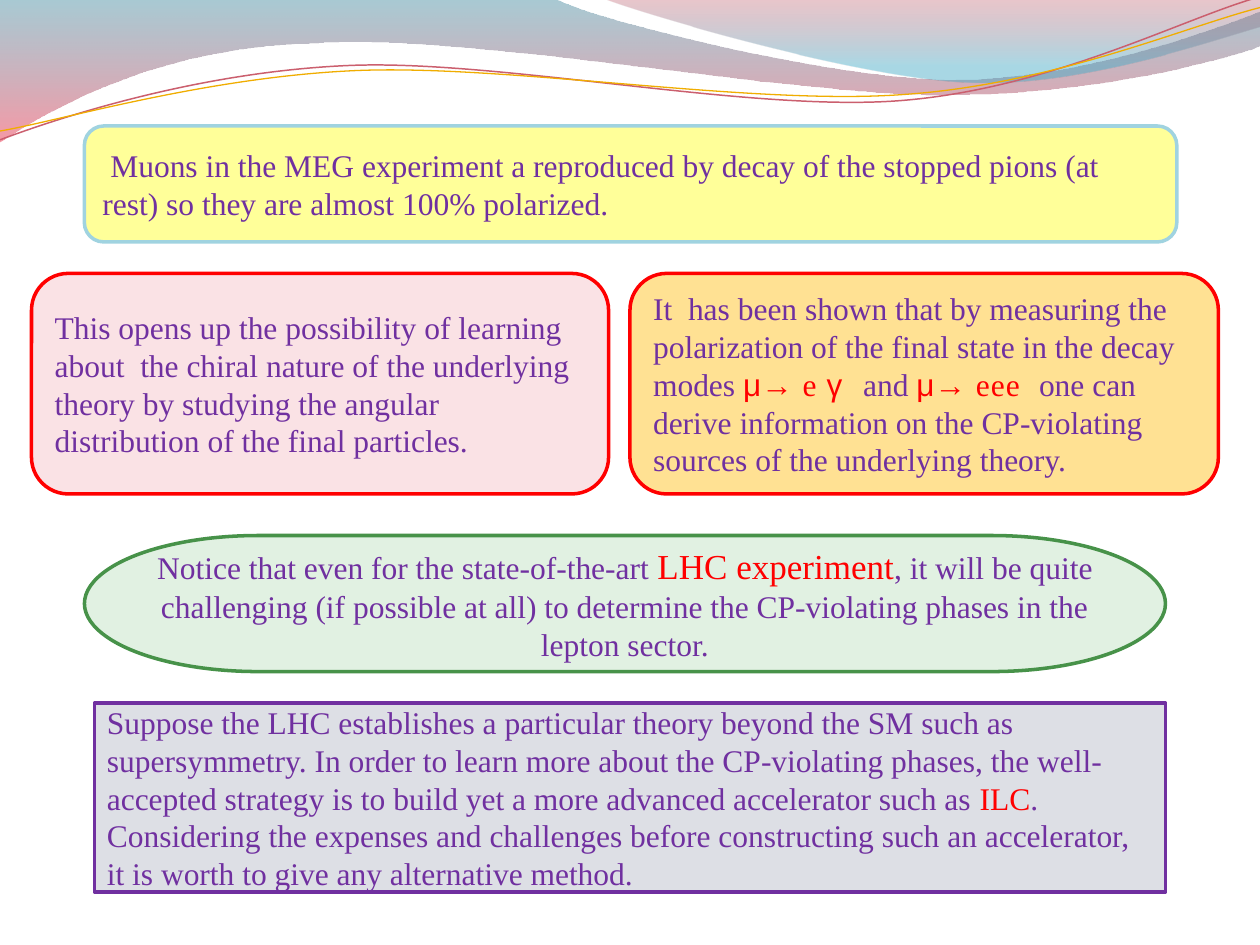
from math import cos, radians, sin

from lxml import etree
from pptx import Presentation
from pptx.dml.color import RGBColor
from pptx.enum.shapes import MSO_SHAPE as Kind
from pptx.enum.text import MSO_ANCHOR as Anchor, PP_ALIGN as Align
from pptx.oxml import parse_xml
from pptx.oxml.ns import nsdecls, qn
from pptx.util import Inches, Pt

WHITE = RGBColor(0xFF, 0xFF, 0xFF)
PURPLE = RGBColor(0x70, 0x30, 0xA0)
RED = RGBColor(0xFF, 0x00, 0x00)
ROSE = RGBColor(0xCB, 0x5F, 0x6E)
AMBER = RGBColor(0xF0, 0xAD, 0x00)
YELLOW = RGBColor(0xFF, 0xFF, 0x99)
SKY = RGBColor(0xA0, 0xD3, 0xE0)
PINK = RGBColor(0xFA, 0xE2, 0xE5)
GOLD = RGBColor(0xFF, 0xE1, 0x93)
MINT = RGBColor(0xE1, 0xF1, 0xE2)
GREEN = RGBColor(0x47, 0x92, 0x49)
GRAY = RGBColor(0xDD, 0xDF, 0xE5)

SERIF, SANS = "Times New Roman", "Arial"
BODY = (SERIF, 18, PURPLE, 0)
HOT = (SERIF, 18, RED, 0)
BIG = (SERIF, 20, RED, 0)
GREEK = (SANS, 18, RED, 0)
WIDE = (SERIF, 18, RED, 0.6)
GAMMA = (SANS, 18, RED, 0.6)

BANDS = [
    ([(0, 0), (4.4, -0.01),
      (4.76, 0.17, 6.64, 0.63, 7.58, 0.63),
      (8.53, 0.63, 9.58, 0.26, 10, 0.09), (10.01, 0.36),
      (9.83, 0.44, 8.7, 0.76, 7.46, 0.75),
      (6.22, 0.75, 3.82, 0.28, 2.57, 0.34),
      (1.29, 0.36, 0.46, 0.83, -0.01, 1.13)],
     [(0, "3F8A9F", 45), (100, "EF445B", 55)]),
    ([(4.79, -0.01),
      (5.09, 0.11, 6.82, 0.62, 7.69, 0.65),
      (8.56, 0.69, 9.61, 0.32, 10, 0.21), (10, 0)],
     [(0, "B84253", 30), (80, "42ABC7", 45)]),
]

TILT = -2.7
WAVES = [
    ([(0, 1.11),
      (0.48, 0.93, 1.58, 0.57, 2.77, 0.52),
      (3.95, 0.47, 5.93, 0.89, 7.13, 0.8),
      (8.33, 0.71, 9.38, 0.15, 9.98, -0.02)], ROSE, 0.85, (-0.02, 0.22, 10.02, 0.71)),
    ([(0, 1.04),
      (0.47, 0.96, 1.64, 0.61, 2.83, 0.56),
      (4.03, 0.51, 5.97, 0.84, 7.17, 0.75),
      (8.36, 0.67, 9.41, 0.21, 10, 0.06)], AMBER, 0.75, (-0.02, 0.3, 10.03, 0.58)),
]

BOXES = [
    (Kind.ROUNDED_RECTANGLE, (0.67, 1, 8.67, 0.92), YELLOW, SKY, Align.LEFT, [
        (" Muons in the MEG experiment a reproduced by decay of the stopped "
         "pions (at rest) so they are almost 100% polarized.", BODY)]),
    (Kind.FLOWCHART_ALTERNATE_PROCESS, (0.25, 2.17, 4.58, 1.75), PINK, RED, Align.LEFT, [
        ("This opens up the possibility of learning about  the chiral nature "
         "of the underlying theory by studying the angular distribution of "
         "the final particles.", BODY)]),
    (Kind.FLOWCHART_ALTERNATE_PROCESS, (5, 2.17, 4.67, 1.75), GOLD, RED, Align.LEFT, [
        ("It  has been shown that by measuring the polarization of the final "
         "state in the decay modes ", BODY),
        ("μ", GREEK), ("→ e ", WIDE), ("γ  ", GAMMA), ("and ", BODY),
        ("μ", GREEK), ("→ eee  ", WIDE),
        ("one can derive information on the CP-violating sources of the "
         "underlying theory.", BODY)]),
    (Kind.FLOWCHART_TERMINATOR, (0.67, 4.25, 8.58, 1.08), MINT, GREEN, Align.CENTER, [
        ("Notice that even for the state-of-the-art ", BODY),
        ("LHC experiment", BIG),
        (", it will be quite challenging (if possible at all) to determine "
         "the CP-violating phases in the lepton sector.", BODY)]),
    (Kind.FLOWCHART_PROCESS, (0.75, 5.58, 8.5, 1.5), GRAY, PURPLE, Align.LEFT, [
        ("Suppose the LHC establishes a particular theory beyond the SM such "
         "as supersymmetry. In order to learn more about the CP-violating "
         "phases, the well-accepted strategy is to build yet a more advanced "
         "accelerator such as ", BODY),
        ("ILC", HOT),
        (". Considering the expenses and challenges before constructing such "
         "an accelerator, it is worth to give any alternative method.", BODY)]),
]


def pairs(part):
    return list(zip(part[::2], part[1::2]))


def turn(path, place, angle):
    left, top, width, height = place
    mx, my = left + width / 2, top + height / 2
    c, s = cos(radians(angle)), sin(radians(angle))
    return [tuple(v for x, y in pairs(part)
                  for v in (mx + (x - mx) * c - (y - my) * s,
                            my + (x - mx) * s + (y - my) * c))
            for part in path]


def draw(shapes, path, close):
    ends = [tuple(map(Inches, part[-2:])) for part in path]
    pen = shapes.build_freeform(*ends[0])
    pen.add_line_segments(ends[1:], close=close)
    shape = pen.convert_to_shape()
    shape.shadow.inherit = False
    lines = list(shape._element.iter(qn("a:lnTo")))
    for line, part in zip(lines, path[1:]):
        if len(part) == 6:
            line.tag = qn("a:cubicBezTo")
            for i, (x, y) in enumerate(pairs(part)[:2]):
                dot = etree.Element(qn("a:pt"), x=str(Inches(x) - shape.left),
                                    y=str(Inches(y) - shape.top))
                line.insert(i, dot)
    return shape


def fade(shape, stops):
    grad = parse_xml(f'<a:gradFill {nsdecls("a")}><a:gsLst/><a:lin ang="5400000" scaled="0"/></a:gradFill>')
    for pos, tint, alpha in stops:
        stop = etree.SubElement(grad[0], qn("a:gs"), pos=str(pos * 1000))
        color = etree.SubElement(stop, qn("a:srgbClr"), val=tint)
        etree.SubElement(color, qn("a:alpha"), val=str(alpha * 1000))
    shape._element.spPr.find(qn("a:custGeom")).addnext(grad)


def add_box(shapes, kind, place, fill, edge, align, runs):
    box = shapes.add_shape(kind, *map(Inches, place))
    box.shadow.inherit = False
    box.fill.solid()
    box.fill.fore_color.rgb = fill
    box.line.color.rgb = edge
    box.line.width = Pt(2)
    frame = box.text_frame
    frame.word_wrap = True
    frame.vertical_anchor = Anchor.MIDDLE
    para = frame.paragraphs[0]
    para.alignment = align
    for text, (face, size, color, gap) in runs:
        run = para.add_run()
        run.text = text
        run.font.name = face
        run.font.size = Pt(size)
        run.font.color.rgb = color
        if gap:
            run._r.get_or_add_rPr().set("spc", str(int(gap * 100)))


def main():
    deck = Presentation()
    deck.slide_width, deck.slide_height = Inches(10), Inches(7.5)
    slide = deck.slides.add_slide(deck.slide_layouts[6])
    slide.background.fill.solid()
    slide.background.fill.fore_color.rgb = WHITE
    for path, stops in BANDS:
        band = draw(slide.shapes, path, True)
        band.line.fill.background()
        fade(band, stops)
    for path, color, width, place in WAVES:
        wave = draw(slide.shapes, turn(path, place, -TILT), False)
        wave.rotation = TILT
        wave.fill.background()
        wave.line.color.rgb = color
        wave.line.width = Pt(width)
    for box in BOXES:
        add_box(slide.shapes, *box)
    deck.save("out.pptx")


if __name__ == "__main__":
    main()
